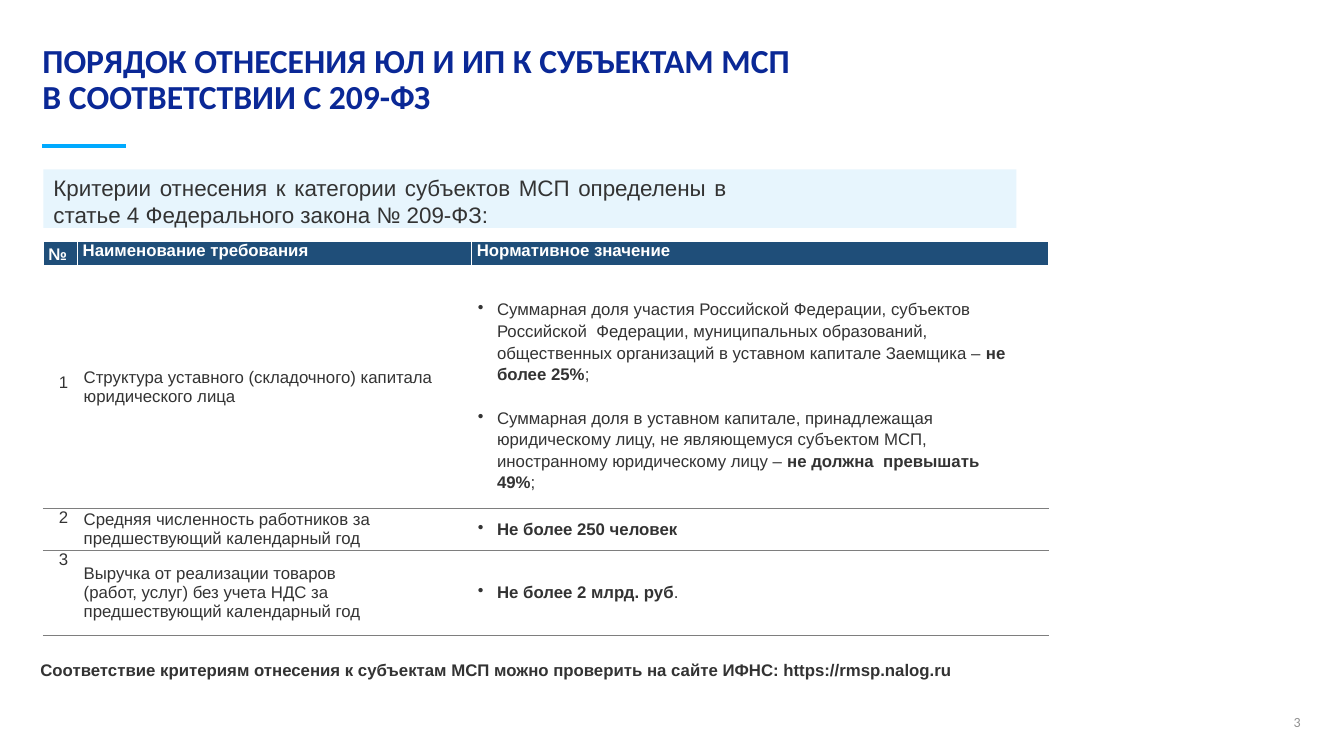
from pptx import Presentation
from pptx import util as u
from pptx.dml import color
from pptx.enum import shapes, text
from pptx.oxml import parse_xml
from pptx.oxml.ns import nsdecls, qn

WIDE, HIGH = u.Inches(13.33), u.Inches(7.5)
INK, WHITE, NAVY, GREY = "333333", "FFFFFF", "1F4E79", "7E7E7E"
MID, TOP = text.MSO_ANCHOR.MIDDLE, text.MSO_ANCHOR.TOP
MIDDLE, RIGHT, FULL = text.PP_ALIGN.CENTER, text.PP_ALIGN.RIGHT, text.PP_ALIGN.JUSTIFY
BODY = {"name": "Arial", "size": u.Pt(12), "bold": False}
BOLD = {**BODY, "bold": True}

HEADS = ["№", "Наименование требования", "Нормативное значение"]
NEEDS = [
    "Структура уставного (складочного) капитала юридического лица",
    "Средняя численность работников за предшествующий календарный год",
    "Выручка от реализации товаров (работ, услуг) без учета НДС "
    "за предшествующий календарный год",
]
LIMITS = [
    [
        [("Суммарная доля участия Российской Федерации, субъектов Российской  Федерации, "
          "муниципальных образований, общественных организаций в уставном капитале "
          "Заемщика – ", False), ("не более 25%", True), (";", False)],
        [("Суммарная доля в уставном капитале, принадлежащая юридическому лицу, "
          "не являющемуся субъектом МСП, иностранному юридическому лицу – ", False),
         ("не должна  превышать 49%", True), (";", False)],
    ],
    [[("Не более 250 человек", True)]],
    [[("Не более 2 млрд. руб", True), (".", False)]],
]


def hue(code):
    return color.RGBColor.from_string(code)


def span(left, top, width, height):
    return (int(WIDE * left / 100), int(HIGH * top / 100),
            int(WIDE * width / 100), int(HIGH * height / 100))


def apply(item, values):
    for key, value in values.items():
        setattr(item, key, value)


def inset(item, left=0, top=0, right=0, bottom=0):
    apply(item, {"margin_left": u.Inches(left), "margin_top": u.Inches(top),
                 "margin_right": u.Inches(right), "margin_bottom": u.Inches(bottom)})


def add_run(para, words, font, ink=INK):
    run = para.add_run()
    run.text = words
    apply(run.font, font)
    run.font.color.rgb = hue(ink)


def indent(para, left, first=0):
    props = para._p.get_or_add_pPr()
    props.set("marL", str(u.Inches(left)))
    props.set("indent", str(u.Inches(first)))
    return props


def add_text(slide, area, words, font, ink=INK, align=None, **edges):
    frame = slide.shapes.add_textbox(*span(*area)).text_frame
    frame.word_wrap = True
    inset(frame, **edges)
    para = frame.paragraphs[0]
    para.alignment = align
    add_run(para, words, font, ink)


def add_title(slide, area, words):
    title = slide.shapes.title
    apply(title, dict(zip(("left", "top", "width", "height"), span(*area))))
    frame = title.text_frame
    apply(frame, {"text": words, "vertical_anchor": TOP, "word_wrap": True,
                  "auto_size": text.MSO_AUTO_SIZE.NONE})
    inset(frame)
    para = frame.paragraphs[0]
    apply(para, {"alignment": text.PP_ALIGN.LEFT, "line_spacing": u.Pt(26)})
    for run in para.runs:
        apply(run.font, {"name": "Calibri", "size": u.Pt(24), "bold": True})
        run.font.color.rgb = hue("0A2896")


def add_rule(slide, left, top, width):
    start, level, size, _ = span(left, top, width, 0)
    rule = slide.shapes.add_connector(
        shapes.MSO_CONNECTOR.STRAIGHT, start, level, start + size, level)
    rule.line.color.rgb = hue("00AAFF")
    rule.line.width = u.Pt(3)
    rule._element.spPr.append(parse_xml(f"<a:effectLst {nsdecls('a')}/>"))


def add_band(slide, area, words):
    band = slide.shapes.add_shape(shapes.MSO_SHAPE.RECTANGLE, *span(*area))
    band.shadow.inherit = False
    band.fill.solid()
    band.fill.fore_color.rgb = hue("E7F5FD")
    band.line.fill.background()
    frame = band.text_frame
    apply(frame, {"word_wrap": True, "vertical_anchor": TOP})
    inset(frame, top=0.05, right=2.87)
    para = frame.paragraphs[0]
    para.alignment = FULL
    indent(para, 0.1)
    add_run(para, words, {**BODY, "size": u.Pt(16)})


def edge(cell, side, code, width):
    props = cell._tc.get_or_add_tcPr()
    props.append(parse_xml(
        f'<a:ln{side} {nsdecls("a")} w="{u.Pt(width)}"><a:solidFill>'
        f'<a:srgbClr val="{code}"/></a:solidFill></a:ln{side}>'))


def fill_head(cell, words, col):
    for side in ("L" if col else "", "R" if col < 2 else ""):
        if side:
            edge(cell, side, WHITE, 1)
    cell.fill.solid()
    cell.fill.fore_color.rgb = hue(NAVY)
    inset(cell)
    para = cell.text_frame.paragraphs[0]
    indent(para, 0.05)
    if col == 0:
        para.line_spacing = u.Pt(16.6)
    add_run(para, words, BOLD, WHITE)


def fill_plain(cell, words, anchor, align=None, **edges):
    cell.vertical_anchor = anchor
    inset(cell, **edges)
    para = cell.text_frame.paragraphs[0]
    para.alignment = align
    indent(para, 0.06)
    add_run(para, words, BODY)


def fill_list(cell, points):
    cell.vertical_anchor = MID
    many = len(points) > 1
    inset(cell, top=0.16 if many else 0, right=0.4)
    frame = cell.text_frame
    for num, parts in enumerate(points):
        para = frame.add_paragraph() if num else frame.paragraphs[0]
        props = indent(para, 0.25, -0.19)
        mark = props.makeelement(qn("a:buChar"), {"char": "•"})
        props.append(mark)
        if many:
            para.line_spacing = 1.15
        if num:
            para.space_before = u.Pt(15.5)
        for words, bold in parts:
            add_run(para, words, BOLD if bold else BODY)


def add_grid(slide, left, top, cols, rows):
    area = span(left, top, sum(cols), sum(rows))
    grid = slide.shapes.add_table(len(rows), len(cols), *area).table
    apply(grid, {"first_row": False, "horz_banding": False})
    for col, share in zip(grid.columns, cols):
        col.width = int(WIDE * share / 100)
    for row, share in zip(grid.rows, rows):
        row.height = int(HIGH * share / 100)
    for col, words in enumerate(HEADS):
        fill_head(grid.cell(0, col), words, col)
    for num, (need, limit) in enumerate(zip(NEEDS, LIMITS), 1):
        cells = grid.rows[num].cells
        for cell in cells:
            if num > 1:
                edge(cell, "T", GREY, 0.25)
            edge(cell, "B", GREY, 0.25)
            cell.fill.background()
        first, second, third = cells
        if num == 1:
            fill_plain(first, str(num), MID, MIDDLE, bottom=0.08)
        else:
            fill_plain(first, str(num), TOP, MIDDLE)
        fill_plain(second, need, MID, right=1 if num == 3 else 0)
        fill_list(third, limit)


def main():
    deck = Presentation()
    apply(deck, {"slide_width": WIDE, "slide_height": HIGH})
    slide = deck.slides.add_slide(deck.slide_layouts[5])
    add_title(slide, (3.15, 5.73, 82.97, 9.73),
              "ПОРЯДОК ОТНЕСЕНИЯ ЮЛ И ИП К СУБЪЕКТАМ МСП\vВ СООТВЕТСТВИИ С 209-ФЗ")
    add_text(slide, (74.94, 94.4, 21.83, 5.6), "3",
             {"name": "Calibri", "size": u.Pt(10)}, "909090", RIGHT, left=0.1, bottom=0.05)
    add_rule(slide, 3.15, 19.33, 6.23)
    add_band(slide, (3.23, 22.4, 72.39, 7.73),
             "Критерии отнесения к категории субъектов МСП определены в "
             "статье 4 Федерального закона № 209-ФЗ:")
    add_grid(slide, 3.23, 31.87, (2.55, 29.33, 42.91), (3.33, 32, 5.6, 11.2))
    add_text(slide, (2.93, 87.2, 73.29, 2.67),
             "Соответствие критериям отнесения к субъектам МСП можно проверить "
             "на сайте ИФНС: https://rmsp.nalog.ru", BOLD, left=0.01)
    deck.save("out.pptx")


if __name__ == "__main__":
    main()
